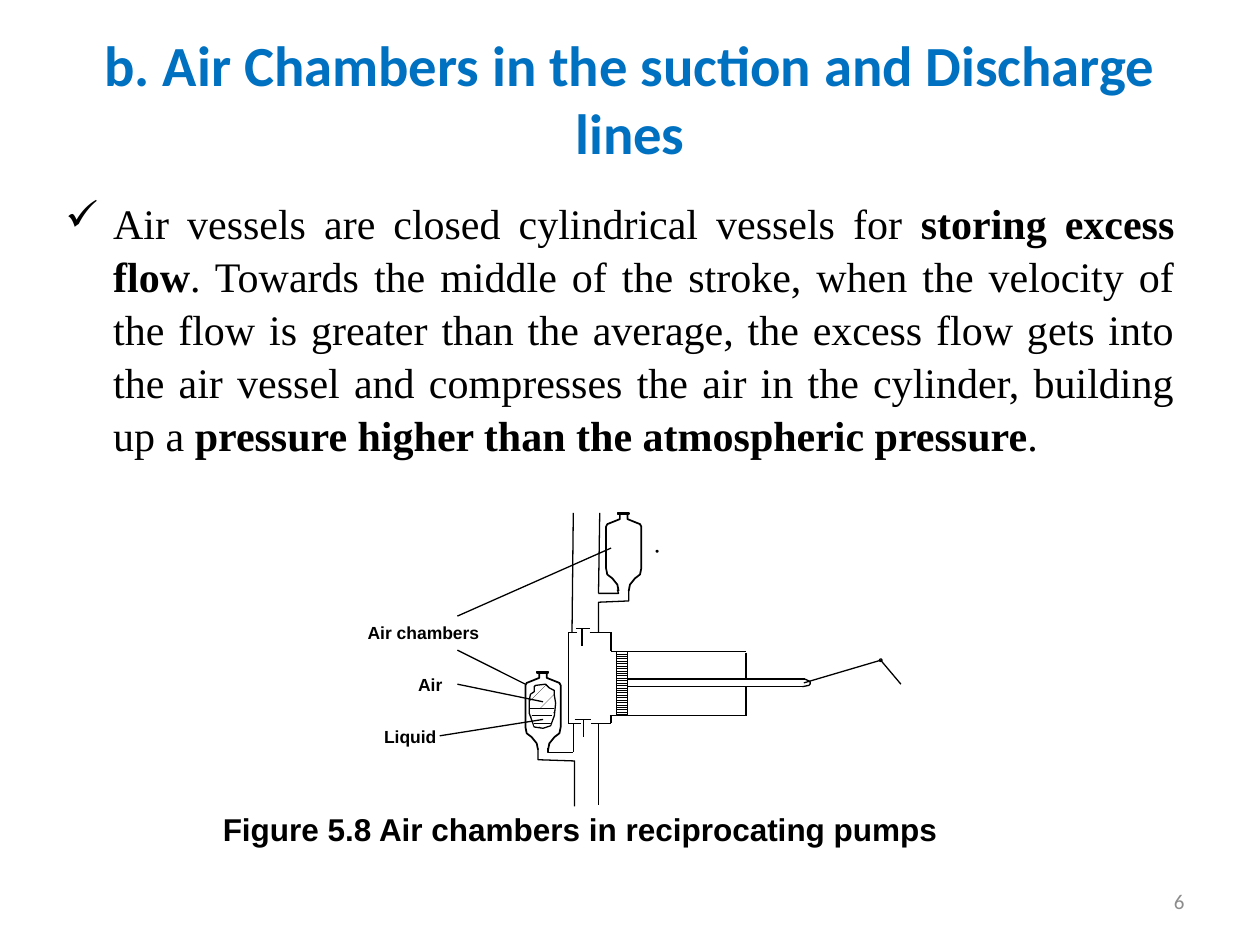
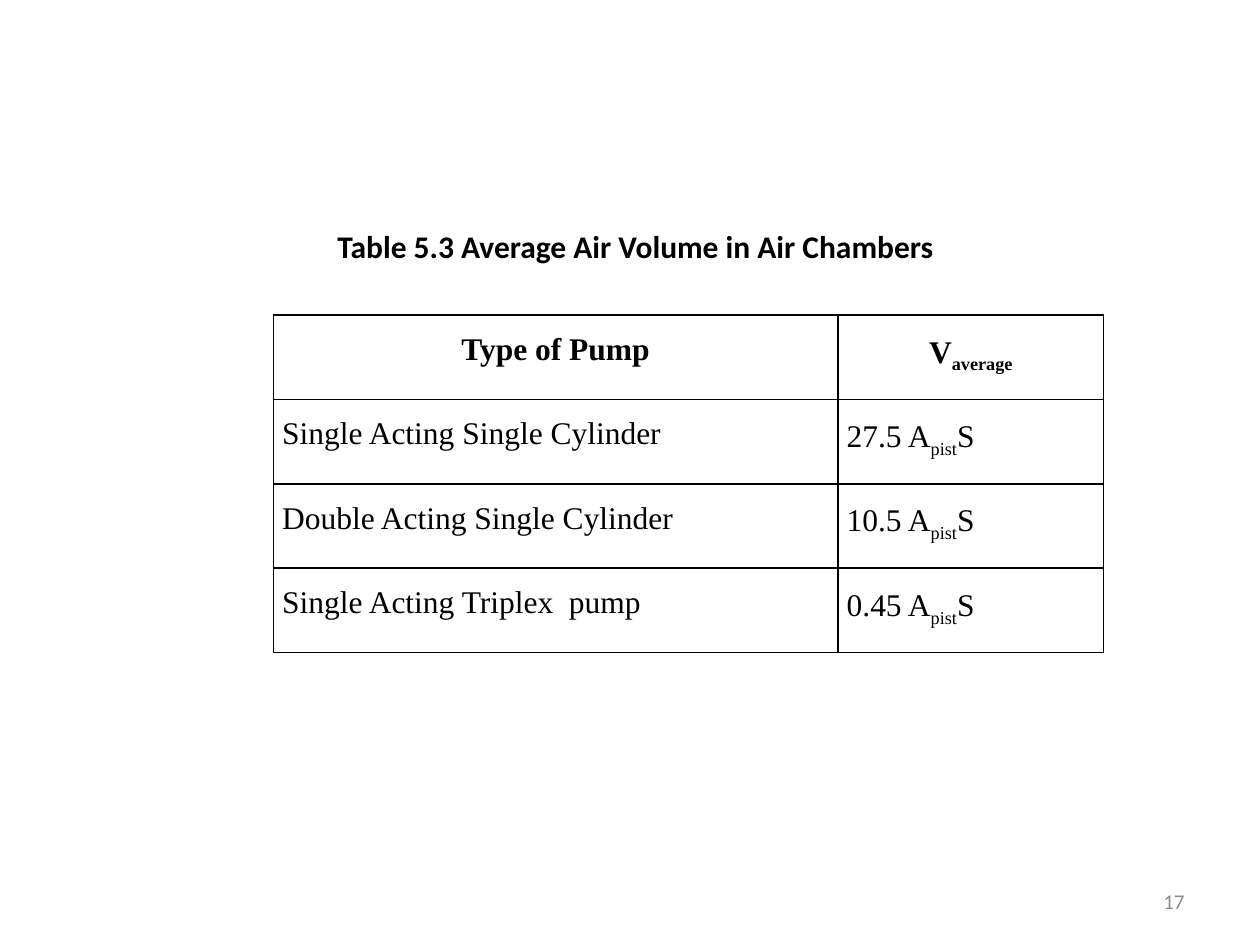
from lxml.etree import SubElement
from pptx import Presentation
from pptx.dml.color import RGBColor
from pptx.enum.dml import MSO_PATTERN
from pptx.enum.shapes import MSO_CONNECTOR, MSO_SHAPE
from pptx.enum.text import MSO_ANCHOR, PP_ALIGN
from pptx.oxml import parse_xml
from pptx.oxml.ns import nsdecls, qn
from pptx.util import Inches, Pt

BLACK, WHITE, BLUE, GRAY = "000000", "FFFFFF", "0070C0", "8C8C8C"
SERIF, SANS, TITLE_FONT = "Times New Roman", "Arial", "Calibri"
BOLD, SUB = "bold", "sub"

TITLE = "b. Air Chambers in the suction and Discharge lines\v"
BODY = [
    ("Air vessels are closed cylindrical vessels for ", None),
    ("storing excess flow", BOLD),
    (". Towards the middle of the stroke, when the velocity of the flow is "
     "greater than the average, the excess flow gets into the air vessel and "
     "compresses the air in the cylinder, building up a ", None),
    ("pressure higher than the atmospheric pressure", BOLD),
    (". ", None),
]
FIGURE_CAPTION = "Figure 5.8 Air chambers in reciprocating pumps"
LABELS = [
    ("Air chambers", (2.82, 4.89, 1.36, 0.27)),
    ("Air", (3.22, 5.3, 0.95, 0.27)),
    ("Liquid", (2.95, 5.71, 0.82, 0.27)),
]
LEADERS = [
    [(3.63, 5.16), (4.17, 5.43)],
    [(4.85, 4.35), (3.63, 4.89)],
    [(3.63, 5.43), (4.31, 5.57)],
    [(3.49, 5.84), (4.31, 5.71)],
]
VALVES = [
    [(4.57, 4.99), (4.68, 4.99)],
    [(4.62, 4.99), (4.62, 5.13)],
    [(4.56, 5.71), (4.69, 5.71)],
    [(4.63, 5.71), (4.63, 5.85)],
]
VALVE_BOX = [
    [(4.58, 5.02), (4.51, 5.02)],
    [(4.51, 5.02), (4.51, 5.74)],
    [(4.51, 5.74), (4.61, 5.74)],
    [(4.68, 5.02), (4.85, 5.02)],
    [(4.85, 5.02), (4.85, 5.17)],
    [(4.69, 5.74), (4.85, 5.74)],
    [(4.85, 5.74), (4.85, 5.68)],
]
CYLINDER = [
    [(4.85, 5.17), (5.92, 5.17)],
    [(4.84, 5.68), (5.92, 5.68)],
    [(5.92, 5.18), (5.92, 5.39)],
    [(5.92, 5.45), (5.92, 5.68)],
]
CRANK = [
    [(4.98, 5.39), (6.39, 5.39)],
    [(4.98, 5.45), (6.39, 5.45)],
    [(6.39, 5.39), (6.41, 5.4), (6.43, 5.41), (6.43, 5.43), (6.42, 5.44), (6.37, 5.45)],
    [(6.38, 5.42), (6.99, 5.24)],
    [(6.99, 5.24), (7.15, 5.43)],
]
PIPES = [
    [(4.54, 5.02), (4.55, 4.07)],
    [(4.99, 4.68), (4.99, 4.77), (4.75, 4.78), (4.75, 5.02)],
    [(4.9, 4.68), (4.91, 4.71), (4.75, 4.71)],
    [(4.75, 4.71), (4.76, 4.07)],
    [(4.27, 5.94), (4.27, 6.03), (4.56, 6.04), (4.56, 6.4)],
    [(4.35, 5.94), (4.35, 5.97), (4.55, 5.97)],
    [(4.55, 5.74), (4.55, 5.97)],
    [(4.75, 5.74), (4.75, 6.39)],
]
VESSELS = [(4.95, 4.07), (4.31, 5.33)]
VESSEL_HALF = [
    (0.03, 0.01), (0.03, 0.05), (0.08, 0.07), (0.13, 0.09), (0.14, 0.11),
    (0.14, 0.44), (0.13, 0.49), (0.09, 0.52), (0.05, 0.57), (0.04, 0.62),
]
AIR_POCKET = [
    (4.25, 5.44), (4.33, 5.43), (4.36, 5.46), (4.4, 5.48), (4.4, 5.52),
    (4.41, 5.58), (4.4, 5.68), (4.37, 5.76), (4.31, 5.78), (4.24, 5.77),
    (4.2, 5.66), (4.2, 5.56), (4.21, 5.51), (4.24, 5.49), (4.24, 5.45),
]
LIQUID = [
    (4.39, 5.62), (4.39, 5.66), (4.38, 5.7), (4.37, 5.75),
    (4.31, 5.77), (4.24, 5.76), (4.22, 5.67), (4.21, 5.62),
]
TABLE_CAPTION = "Table 5.3 Average Air Volume in Air Chambers"
HEADER = ("Type of Pump", [("V", None), ("average", SUB)])
VOLUMES = [
    ("Single Acting Single Cylinder", "27.5"),
    ("Double Acting Single Cylinder", "10.5"),
    ("Single Acting Triplex  pump", "0.45"),
]
COLUMN_WIDTHS = (4.48, 2.11)
ROW_HEIGHT = 0.67


def color(code):
    return RGBColor.from_string(code)


def inches(values):
    return [Inches(value) for value in values]


def write(frame, content, size, font, code=BLACK, bold=False, align=PP_ALIGN.LEFT):
    para = frame.paragraphs[0]
    if isinstance(content, str):
        para.text = content
    else:
        for text, style in content:
            span = para.add_run()
            span.text = text
            if style == BOLD:
                span.font.bold = True
            elif style == SUB:
                span._r.get_or_add_rPr().set("baseline", "-25000")
    para.alignment = align
    para.font.size, para.font.name, para.font.bold = Pt(size), font, bold
    para.font.color.rgb = color(code)
    return para


def add_text(shapes, place, content, size, font, anchor=MSO_ANCHOR.TOP, **look):
    box = shapes.add_textbox(*inches(place))
    box.text_frame.word_wrap = True
    box.text_frame.vertical_anchor = anchor
    return write(box.text_frame, content, size, font, **look)


def add_number(page, number):
    add_text(page.shapes, (7.17, 6.95, 2.33, 0.4), number, 12, TITLE_FONT,
             MSO_ANCHOR.MIDDLE, code=GRAY, align=PP_ALIGN.RIGHT)


def dress(shape, width=0.75, pattern=None, fill=None):
    shape.shadow.inherit = False
    if pattern:
        shape.fill.patterned()
        shape.fill.pattern = pattern
        shape.fill.fore_color.rgb = color(BLACK)
        shape.fill.back_color.rgb = color(WHITE)
    elif fill:
        shape.fill.solid()
        shape.fill.fore_color.rgb = color(fill)
    else:
        shape.fill.background()
    if width:
        shape.line.width = Pt(width)
        shape.line.color.rgb = color(BLACK)
    else:
        shape.line.fill.background()


def add_outline(shapes, points, close=False, **look):
    start, *others = [inches(point) for point in points]
    builder = shapes.build_freeform(*start)
    builder.add_line_segments(others, close=close)
    dress(builder.convert_to_shape(), **look)


def add_path(shapes, points, width=0.75):
    if len(points) > 2:
        add_outline(shapes, points, width=width)
        return
    start, end = points
    line = shapes.add_connector(MSO_CONNECTOR.STRAIGHT, *inches(start + end))
    line.line.width = Pt(width)
    line.line.color.rgb = color(BLACK)
    SubElement(line._element.spPr, qn("a:effectLst"))


def add_preset(shapes, kind, place, **look):
    dress(shapes.add_shape(kind, *inches(place)), **look)


def add_vessel(shapes, center, top):
    for side in (-1, 1):
        add_path(shapes, [(center + side * x, top + y) for x, y in VESSEL_HALF], 1)
    add_preset(shapes, MSO_SHAPE.RECTANGLE, (center - 0.05, top, 0.09, 0.01),
               width=1, fill=WHITE)


def add_pump(page):
    shapes = page.shapes.add_group_shape().shapes
    for points in VALVE_BOX + VALVES + CYLINDER + CRANK + PIPES:
        add_path(shapes, points)
    add_preset(shapes, MSO_SHAPE.RECTANGLE, (4.89, 5.17, 0.09, 0.51),
               pattern=MSO_PATTERN.LIGHT_HORIZONTAL)
    add_preset(shapes, MSO_SHAPE.OVAL, (6.98, 5.23, 0.02, 0.02))
    add_preset(shapes, MSO_SHAPE.OVAL, (5.21, 4.37, 0.01, 0.01), width=1)
    for center, top in VESSELS:
        add_vessel(shapes, center, top)
    add_outline(shapes, AIR_POCKET, close=True, pattern=MSO_PATTERN.PERCENT_5)
    add_outline(shapes, LIQUID, close=True, width=0,
                pattern=MSO_PATTERN.DASHED_HORIZONTAL)
    add_path(shapes, [(4.21, 5.62), (4.4, 5.62)], 0.25)
    for points in LEADERS:
        add_path(shapes, points)
    for label, place in LABELS:
        add_text(shapes, place, label, 10, SANS, bold=True)
    caption = add_text(shapes, (1.17, 6.38, 7, 0.41), FIGURE_CAPTION, 18, SANS,
                       bold=True, align=PP_ALIGN.JUSTIFY)
    caption._p.get_or_add_pPr().set("indent", str(Inches(0.5)))


def build_chamber_page(page):
    add_text(page.shapes, (0.5, 0.42, 9, 1.25), TITLE, 32.4, TITLE_FONT,
             MSO_ANCHOR.MIDDLE, code=BLUE, bold=True, align=PP_ALIGN.CENTER)
    body = add_text(page.shapes, (0.42, 1.5, 9, 2.25), BODY, 24, SERIF,
                    align=PP_ALIGN.JUSTIFY)
    body.space_before, body.line_spacing = Pt(4.8), 1.05
    properties = body._p.get_or_add_pPr()
    properties.set("marL", str(Inches(0.38)))
    properties.set("indent", str(-Inches(0.38)))
    properties.find(qn("a:defRPr")).addprevious(
        parse_xml(f'<a:buChar {nsdecls("a")} char="✓"/>'))
    add_pump(page)
    add_number(page, "6")


def fill_cell(cell, content, is_header):
    cell.margin_left = cell.margin_right = Inches(0.07)
    cell.margin_top = cell.margin_bottom = 0
    cell.fill.background()
    para = write(cell.text_frame, content, 18, SERIF, bold=is_header,
                 align=PP_ALIGN.CENTER if is_header else PP_ALIGN.JUSTIFY)
    para.line_spacing = 1.5
    for place, edge in enumerate("LRTB"):
        cell._tc.get_or_add_tcPr().insert(place, parse_xml(
            f'<a:ln{edge} {nsdecls("a")} w="{Pt(1)}"><a:solidFill>'
            f'<a:srgbClr val="{BLACK}"/></a:solidFill></a:ln{edge}>'))


def build_volume_page(page):
    rows = [HEADER] + [
        (pump, [(f"{factor} A", None), ("pist", SUB), ("S", None)])
        for pump, factor in VOLUMES
    ]
    place = (2.17, 2.5, sum(COLUMN_WIDTHS), ROW_HEIGHT * len(rows))
    table = page.shapes.add_table(len(rows), len(COLUMN_WIDTHS), *inches(place)).table
    table.first_row = table.horz_banding = False
    for column, width in zip(table.columns, COLUMN_WIDTHS):
        column.width = Inches(width)
    for row, contents in enumerate(rows):
        for column, content in enumerate(contents):
            fill_cell(table.cell(row, column), content, row == 0)
    caption = add_text(page.shapes, (2.58, 1.75, 5.75, 0.37), TABLE_CAPTION, 18,
                       TITLE_FONT, bold=True)
    caption.space_after = Pt(10)
    add_number(page, "17")


def main():
    deck = Presentation()
    deck.slide_width, deck.slide_height = Inches(10), Inches(7.5)
    for build in (build_chamber_page, build_volume_page):
        build(deck.slides.add_slide(deck.slide_layouts[6]))
    deck.save("out.pptx")


if __name__ == "__main__":
    main()
